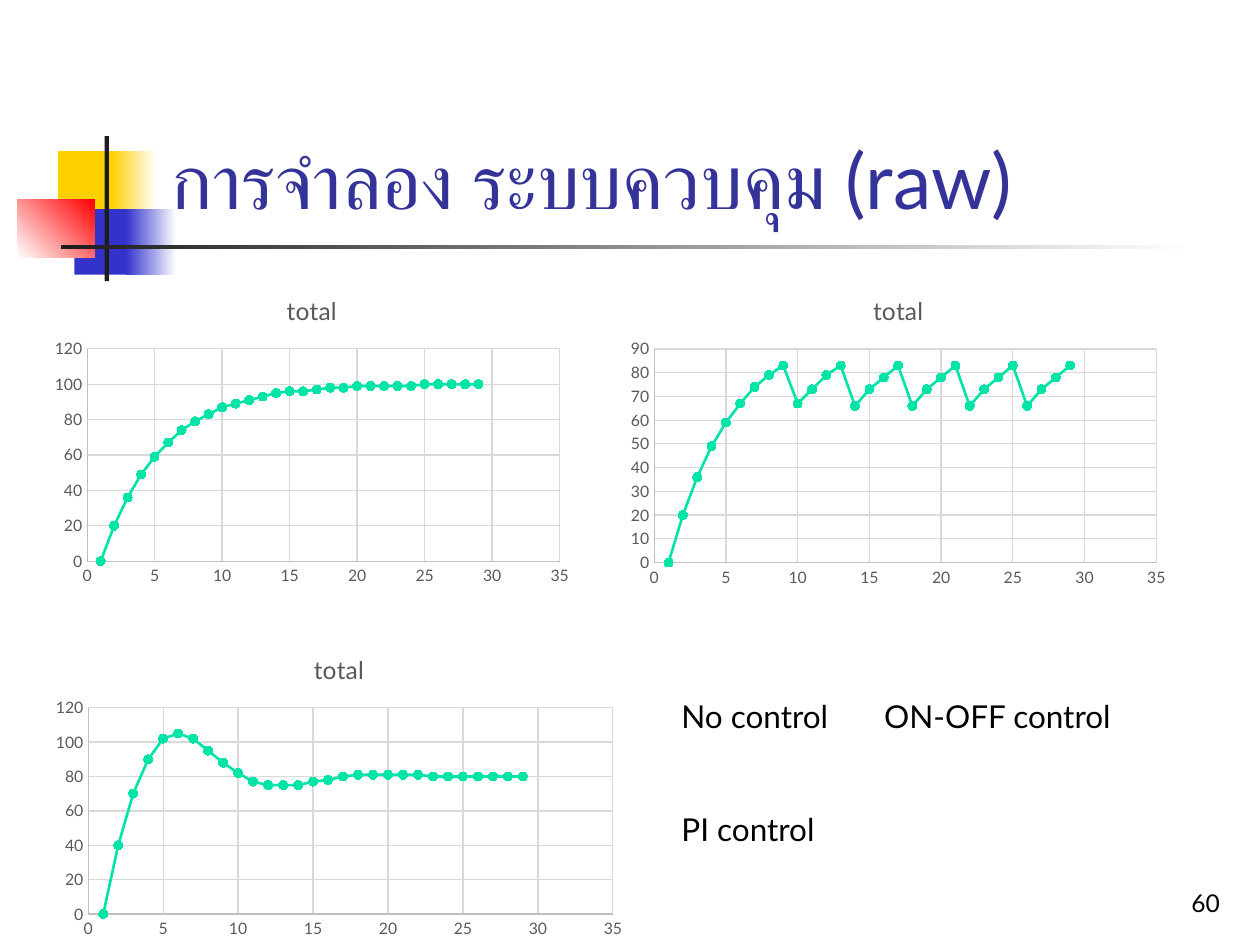
from lxml import etree
from pptx import Presentation
from pptx.chart.data import XyChartData
from pptx.dml.color import RGBColor
from pptx.enum.chart import XL_CHART_TYPE, XL_MARKER_STYLE, XL_TICK_MARK
from pptx.enum.shapes import MSO_SHAPE
from pptx.enum.text import MSO_ANCHOR, PP_ALIGN
from pptx.oxml.ns import qn
from pptx.util import Pt

SCATTER = XL_CHART_TYPE.XY_SCATTER_LINES
CIRCLE = XL_MARKER_STYLE.CIRCLE
NO_TICK = XL_TICK_MARK.NONE
RECTANGLE = MSO_SHAPE.RECTANGLE
TOP, BOTTOM = MSO_ANCHOR.TOP, MSO_ANCHOR.BOTTOM
LEFT, RIGHT = PP_ALIGN.LEFT, PP_ALIGN.RIGHT

FONT = "Lato"
WHITE = RGBColor(0xFF, 0xFF, 0xFF)
BLACK = RGBColor(0, 0, 0)
YELLOW = RGBColor(0xFF, 0xCF, 0x01)
BLUE = RGBColor(0x33, 0x33, 0xCC)
RED = RGBColor(0xFF, 0, 0)
INK = RGBColor(0x1C, 0x1C, 0x1C)
NAVY = RGBColor(0x33, 0x33, 0x99)
GREEN = RGBColor(0, 0xE4, 0xA8)
LABEL_GRAY = RGBColor(0x59, 0x59, 0x59)
AXIS_GRAY = RGBColor(0xBF, 0xBF, 0xBF)
GRID_GRAY = RGBColor(0xD9, 0xD9, 0xD9)

ORNAMENTS = [
    ((33.1, 86.4, 34.6, 37.4), (YELLOW,), 0),
    ((63.4, 86.4, 25.9, 37.4), (YELLOW, WHITE), 0),
    ((42.5, 119.5, 33.1, 37.4), (BLUE,), 0),
    ((72, 119.5, 28.8, 37.4), (BLUE, WHITE), 0),
    ((10, 113.8, 44, 33.1), (WHITE, RED), 45),
    ((59.8, 77.8, 2.5, 82.8), (INK,), 0),
    ((34.6, 140.1, 648, 2.5), (INK, WHITE), 0),
]

TITLE = "การจำลอง ระบบควบคุม (raw)"
CAPTIONS = ["No control\tON-OFF control", "PI control"]
CAPTION_GAP = 43.2
CAPTION_TAB = 115.9

NO_CONTROL = [0, 20, 36, 49, 59, 67, 74, 79, 83, 87, 89, 91, 93, 95, 96,
              96, 97, 98, 98, 99, 99, 99, 99, 99, 100, 100, 100, 100, 100]
ON_OFF = [0, 20, 36, 49, 59, 67, 74, 79, 83, 67, 73, 79, 83] + [66, 73, 78, 83] * 4
PI_CONTROL = [0, 40, 70, 90, 102, 105, 102, 95, 88, 82, 77, 75, 75, 75, 77,
              78, 80, 81, 81, 81, 81, 81, 80, 80, 80, 80, 80, 80, 80]
CHARTS = [
    ((25.2, 157, 306, 181.4), NO_CONTROL, 120, 20),
    ((354.2, 157, 318.2, 182.2), ON_OFF, 90, 10),
    ((25.2, 362.2, 337, 177.8), PI_CONTROL, 120, 20),
]


def points(frame):
    return [Pt(length) for length in frame]


def style_font(font, size, color):
    for name, value in {"name": FONT, "size": Pt(size), "bold": False}.items():
        setattr(font, name, value)
    font.color.rgb = color


def style_line(line, color, width):
    line.color.rgb = color
    line.width = Pt(width)


def add_ornament(page, frame, colors, angle):
    shape = page.shapes.add_shape(RECTANGLE, *points(frame))
    shape.shadow.inherit = False
    shape.line.fill.background()
    if len(colors) == 1:
        shape.fill.solid()
        shape.fill.fore_color.rgb = colors[0]
        return
    shape.fill.gradient()
    shape.fill.gradient_angle = angle
    for stop, color, position in zip(shape.fill.gradient_stops, colors, (0, 1)):
        stop.color.rgb = color
        stop.position = position


def add_text(page, frame, lines, size, color, anchor=TOP, align=LEFT, gap=0, tab=0):
    box = page.shapes.add_textbox(*points(frame))
    box.text_frame.word_wrap = True
    box.text_frame.vertical_anchor = anchor
    for index, line in enumerate(lines):
        para = box.text_frame.add_paragraph() if index else box.text_frame.paragraphs[0]
        para.alignment = align
        if index:
            para.space_before = Pt(gap)
        if "\t" in line:
            tabs = etree.SubElement(para._p.get_or_add_pPr(), qn("a:tabLst"))
            etree.SubElement(tabs, qn("a:tab"), pos=str(Pt(tab)), algn="l")
        span = para.add_run()
        span.text = line
        style_font(span.font, size, color)


def style_axis(axis, maximum, step):
    settings = {"minimum_scale": 0, "maximum_scale": maximum, "major_unit": step,
                "has_major_gridlines": True, "major_tick_mark": NO_TICK,
                "minor_tick_mark": NO_TICK}
    for name, value in settings.items():
        setattr(axis, name, value)
    style_line(axis.format.line, AXIS_GRAY, 0.75)
    style_line(axis.major_gridlines.format.line, GRID_GRAY, 0.75)
    style_font(axis.tick_labels.font, 9, LABEL_GRAY)


def add_response_chart(page, frame, values, maximum, step):
    data = XyChartData()
    response = data.add_series("total")
    for time, value in enumerate(values, 1):
        response.add_data_point(time, value)
    chart = page.shapes.add_chart(SCATTER, *points(frame), data).chart
    style_font(chart.font, 10, BLACK)
    chart.has_legend = False
    chart.has_title = True
    chart.chart_title.include_in_layout = False
    span = chart.chart_title.text_frame.paragraphs[0].add_run()
    span.text = "total"
    style_font(span.font, 14, LABEL_GRAY)
    style_axis(chart.category_axis, 35, 5)
    style_axis(chart.value_axis, maximum, step)
    plot = chart.plots[0]
    plot.vary_by_categories = False
    series = plot.series[0]
    series.smooth = False
    style_line(series.format.line, GREEN, 1.5)
    series.marker.style = CIRCLE
    series.marker.size = 5
    series.marker.format.fill.solid()
    series.marker.format.fill.fore_color.rgb = GREEN
    style_line(series.marker.format.line, GREEN, 0.75)


def main():
    deck = Presentation()
    deck.slide_width, deck.slide_height = Pt(720), Pt(540)
    page = deck.slides.add_slide(deck.slide_layouts[6])
    for ornament in ORNAMENTS:
        add_ornament(page, *ornament)
    add_text(page, (90.7, 16.6, 613.4, 115.2), [TITLE], 44, NAVY, BOTTOM)
    add_text(page, (554.4, 491.8, 149.8, 36), ["60"], 14, BLACK, BOTTOM, RIGHT)
    for chart in CHARTS:
        add_response_chart(page, *chart)
    add_text(page, (382.3, 394.6, 290.2, 94.3), CAPTIONS, 18, BLACK,
             gap=CAPTION_GAP, tab=CAPTION_TAB)
    deck.save("out.pptx")


if __name__ == "__main__":
    main()
